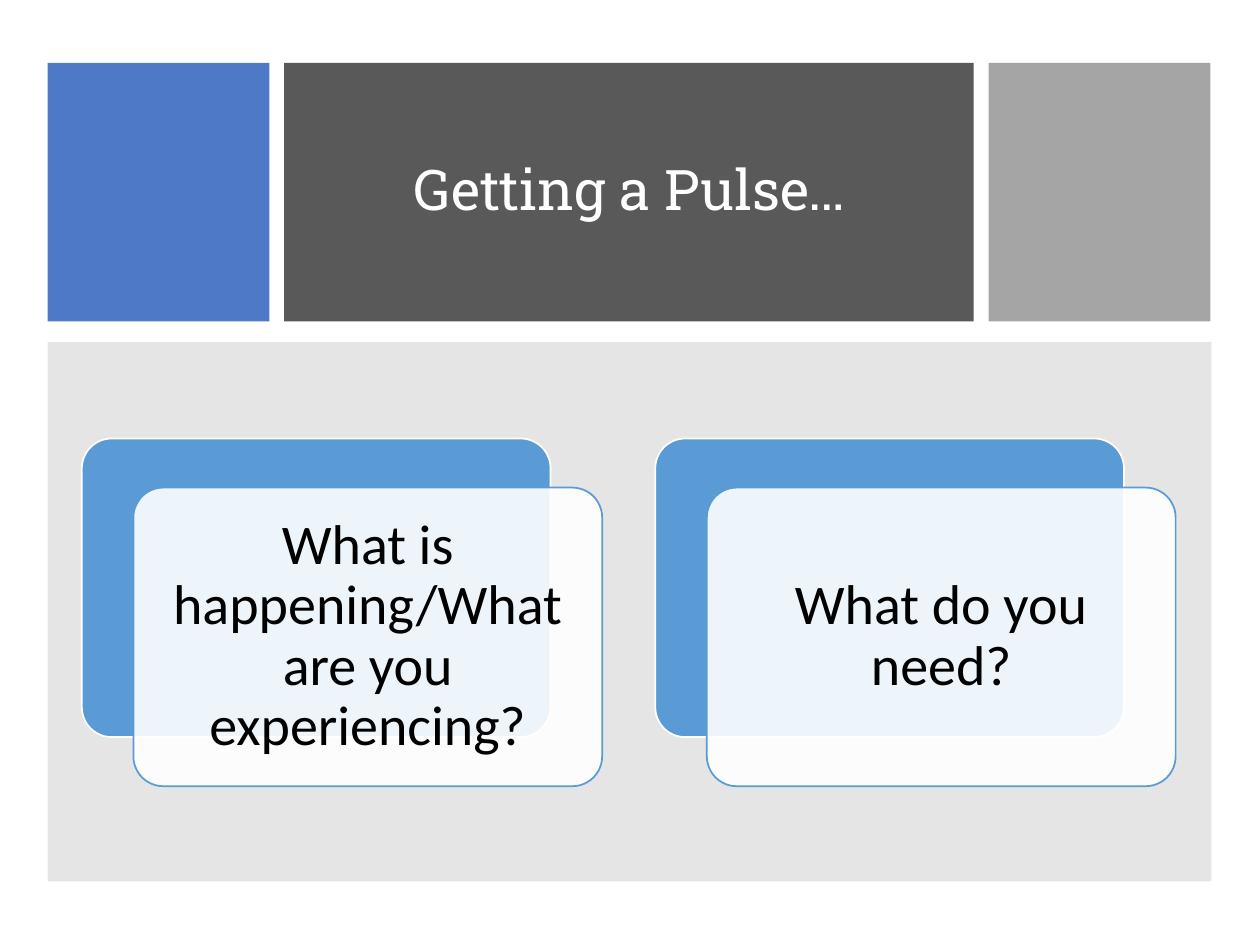
from dataclasses import dataclass

from lxml.etree import SubElement
from pptx import Presentation
from pptx.dml.color import RGBColor
from pptx.enum.shapes import MSO_SHAPE
from pptx.enum.text import MSO_ANCHOR, MSO_AUTO_SIZE, PP_ALIGN
from pptx.oxml.ns import qn
from pptx.util import Cm, Pt


@dataclass(frozen=True)
class Theme:
    blue: str = "4472C4"
    dark: str = "595959"
    silver: str = "A5A5A5"
    panel: str = "808080"
    sky: str = "5B9BD5"
    white: str = "FFFFFF"
    black: str = "000000"
    title_font: str = "Roboto Slab"
    body_font: str = "Calibri"
    size: int = 32
    line: int = 1


class Deck:
    """Hold the theme and the current slide, and draw each kind of element."""

    def __init__(self, prs, theme):
        self.theme = theme
        self.s = prs.slides.add_slide(prs.slide_layouts[5])

    def add_text(self, sp, text, font, color, inset, bottom):
        tf = sp.text_frame
        tf.word_wrap = True
        tf.auto_size = MSO_AUTO_SIZE.NONE
        tf.vertical_anchor = MSO_ANCHOR.MIDDLE
        tf.margin_left = tf.margin_right = tf.margin_top = Cm(inset)
        tf.margin_bottom = Cm(bottom)
        p = tf.paragraphs[0]
        p.alignment = PP_ALIGN.CENTER
        p.line_spacing = 0.9
        r = p.add_run()
        r.text = text
        r.font.name = font
        r.font.size = Pt(self.theme.size)
        r.font.color.rgb = RGBColor.from_string(color)

    def box(self, x, y, w, h, fill, alpha=100, line=None, kind=MSO_SHAPE.RECTANGLE):
        sp = self.s.shapes.add_shape(kind, Cm(x), Cm(y), Cm(w), Cm(h))
        sp.shadow.inherit = False
        sp.fill.solid()
        sp.fill.fore_color.rgb = RGBColor.from_string(fill)
        if alpha < 100:
            clr = sp._element.spPr.find(qn("a:solidFill")).find(qn("a:srgbClr"))
            SubElement(clr, qn("a:alpha")).set("val", str(alpha * 1000))
        if line:
            sp.line.color.rgb = RGBColor.from_string(line)
            sp.line.width = Pt(self.theme.line)
        else:
            sp.line.fill.background()
        return sp

    def card(self, x, y, w, h, fill, line, alpha=100):
        sp = self.box(x, y, w, h, fill, alpha, line, MSO_SHAPE.ROUNDED_RECTANGLE)
        sp.adjustments[0] = 0.1
        return sp

    def question(self, x, y, text):
        t = self.theme
        w, h = 9.45, 6.02
        self.card(x, y, w, h, t.sky, t.white)
        front = self.card(x + 1.04, y + 0.99, w, h, t.white, t.sky, 90)
        self.add_text(front, text, t.body_font, t.black, 0.33, 0.33)

    def title(self, x, y, w, h, text):
        sp = self.s.shapes.title
        sp.left, sp.top, sp.width, sp.height = Cm(x), Cm(y), Cm(w), Cm(h)
        self.add_text(sp, text, self.theme.title_font, self.theme.white, 0, 0.25)
        sp._element.getparent().append(sp._element)


def main():
    prs = Presentation()
    prs.slide_width, prs.slide_height = Cm(25.4), Cm(19.05)
    t = Theme()
    deck = Deck(prs, t)

    left, gap = 0.96, 0.3
    x = left
    for w, fill, alpha in ((4.47, t.blue, 95), (13.9, t.dark, 100), (4.47, t.silver, 100)):
        deck.box(x, 1.27, w, 5.21, fill, alpha)
        x += w + gap
    deck.title(6.35, 2.03, 12.7, 3.96, "Getting a Pulse…")

    deck.box(left, 6.9, 23.46, 10.87, t.panel, 20)
    questions = ("What is happening/What are you experiencing?", "What do you need?")
    for i, text in enumerate(questions):
        deck.question(1.65 + i * 11.56, 8.84, text)

    prs.save("out.pptx")


if __name__ == "__main__":
    main()
